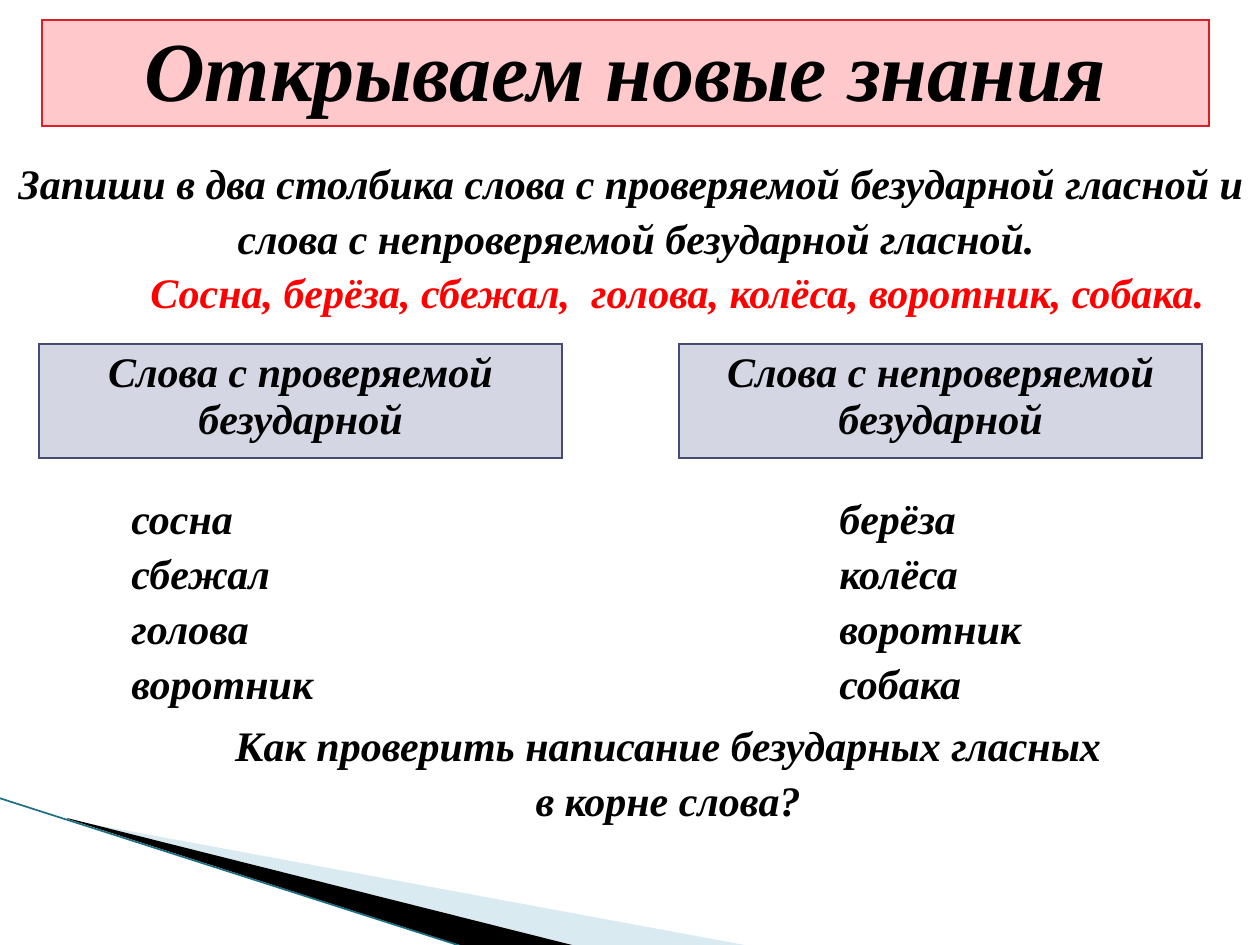
import pptx
import pptx.dml.color
import pptx.enum.text
import pptx.oxml
import pptx.oxml.ns
import pptx.util
from lxml import etree

PX = 914400 / 126  # EMU per px
FONT = "Times New Roman"
COLORS = {
    "text": "000000", "words": "FF0000",
    "title_fill": "FFC9CB", "title_line": "DA1F28",
    "head_fill": "D5D6E3", "head_line": "474B78",
    "wedge": "A0CBDC", "band": "000000", "edge": "1A6F82",
}
ALIGN = pptx.enum.text.PP_ALIGN
A = "http://schemas.openxmlformats.org/drawingml/2006/main"


def rgb(name):
    return pptx.dml.color.RGBColor.from_string(COLORS[name])


def write(tf, lines, size, color, align, spacing):
    for i, line in enumerate(lines):
        p = tf.paragraphs[0] if i == 0 else tf.add_paragraph()
        p.text = line
        p.alignment = align
        p.line_spacing = spacing
        p.font.name = FONT
        p.font.size = pptx.util.Pt(size)
        p.font.bold = p.font.italic = True
        p.font.color.rgb = rgb(color)


prs = pptx.Presentation()
prs.slide_width, prs.slide_height = pptx.util.Inches(10), pptx.util.Inches(7.5)
s = prs.slides.add_slide(prs.slide_layouts[6])

# Corner wedges
wedges = [
    ("wedge", [(69, 820), (750, 946), (575, 946), (69, 819)]),
    ("band", [(67, 818), (576, 946), (469, 948), (68, 819)]),
]
for color, points in wedges:
    fb = s.shapes.build_freeform(*points[0], scale=PX)
    fb.add_line_segments(points[1:], close=True)
    sp = fb.convert_to_shape()
    sp.shadow.inherit = False
    sp.fill.solid()
    sp.fill.fore_color.rgb = rgb(color)
    sp.line.fill.background()
    if color == "wedge":
        clr = sp.fill._xPr.find(f".//{{{A}}}srgbClr")
        etree.SubElement(clr, f"{{{A}}}alpha", val="40000")

# Corner edge line
ends = [round(v * PX) for v in (-1, 798, 467, 948)]
cn = s.shapes.add_connector(pptx.enum.shapes.MSO_CONNECTOR.STRAIGHT, *ends)
cn.line.color.rgb = rgb("edge")
cn.line.width = pptx.util.Pt(0.95)
etree.SubElement(cn._element.spPr, f"{{{A}}}effectLst")

# Title and column headings, each a one-cell table
tables = [
    ("Открываем новые знания", 48, "title", (42, 20, 1167, 106)),
    ("Слова с проверяемой безударной", 24, "head", (39, 344, 523, 114)),
    ("Слова с непроверяемой безударной", 24, "head", (679, 344, 523, 114)),
]
for text, size, kind, box in tables:
    tbl = s.shapes.add_table(1, 1, *[round(v * PX) for v in box]).table
    tbl.first_row = tbl.horz_banding = False
    cell = tbl.cell(0, 0)
    tcPr = cell._tc.get_or_add_tcPr()
    for side in ("lnL", "lnR", "lnT", "lnB"):
        tcPr.append(pptx.oxml.parse_xml(
            f'<a:{side} xmlns:a="{A}" w="9525"><a:solidFill>'
            f'<a:srgbClr val="{COLORS[kind + "_line"]}"/></a:solidFill></a:{side}>'))
    cell.fill.solid()
    cell.fill.fore_color.rgb = rgb(kind + "_fill")
    write(cell.text_frame, [text], size, "text", ALIGN.CENTER, 1.0)

# Task, question, word list and answers
texts = [
    (["Запиши в два столбика слова с проверяемой безударной гласной и ",
      "слова с непроверяемой безударной гласной."],
     "text", ALIGN.CENTER, (-1, 147, 1274, 115)),
    (["Как проверить написание безударных гласных", "в корне слова?"],
     "text", ALIGN.CENTER, (218, 709, 900, 115)),
    (["Сосна, берёза, сбежал,  голова, колёса, воротник, собака."],
     "words", ALIGN.LEFT, (138, 256, 1090, 63)),
    (["сосна", "сбежал", "голова", "воротник"],
     "text", ALIGN.LEFT, (119, 482, 209, 217)),
    (["берёза", "колёса", "воротник", "собака"],
     "text", ALIGN.LEFT, (827, 482, 209, 217)),
]
for lines, color, align, box in texts:
    tf = s.shapes.add_textbox(*[round(v * PX) for v in box]).text_frame
    tf.word_wrap = False
    write(tf, lines, 24, color, align, 1.09)

prs.save("out.pptx")
